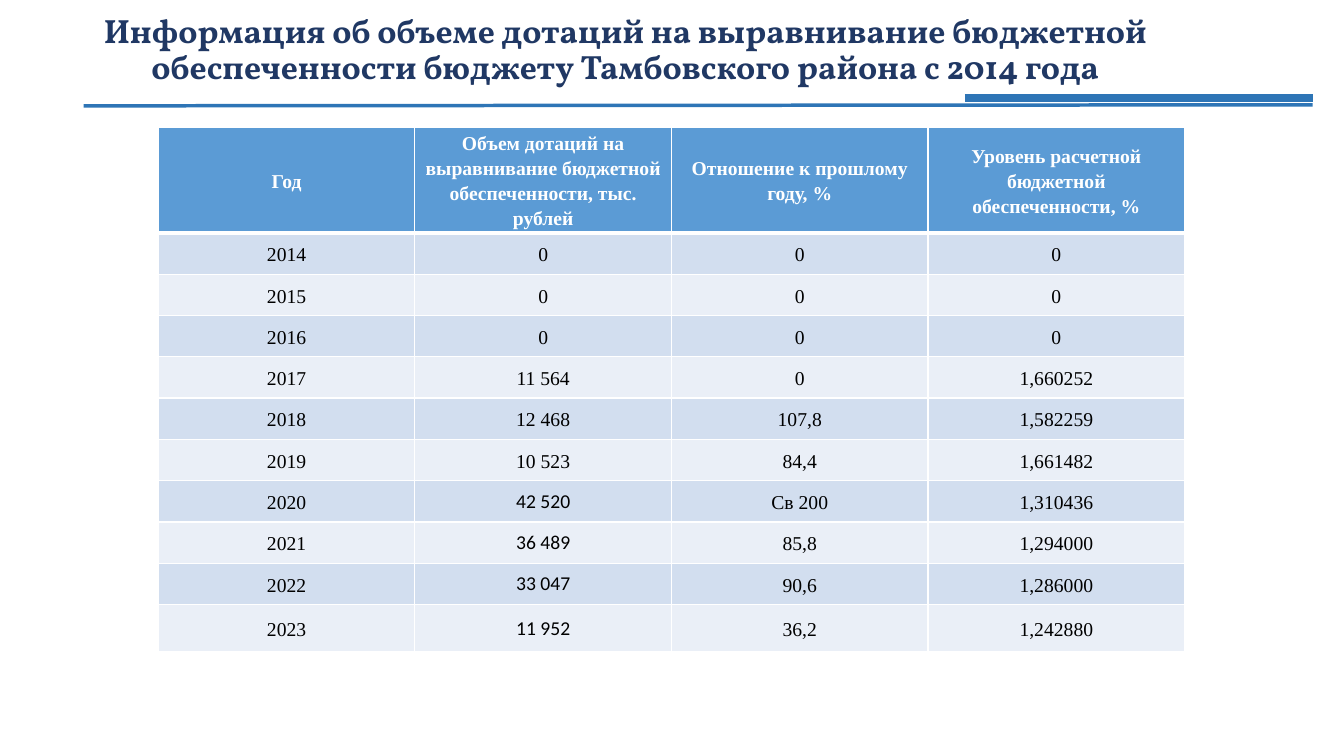
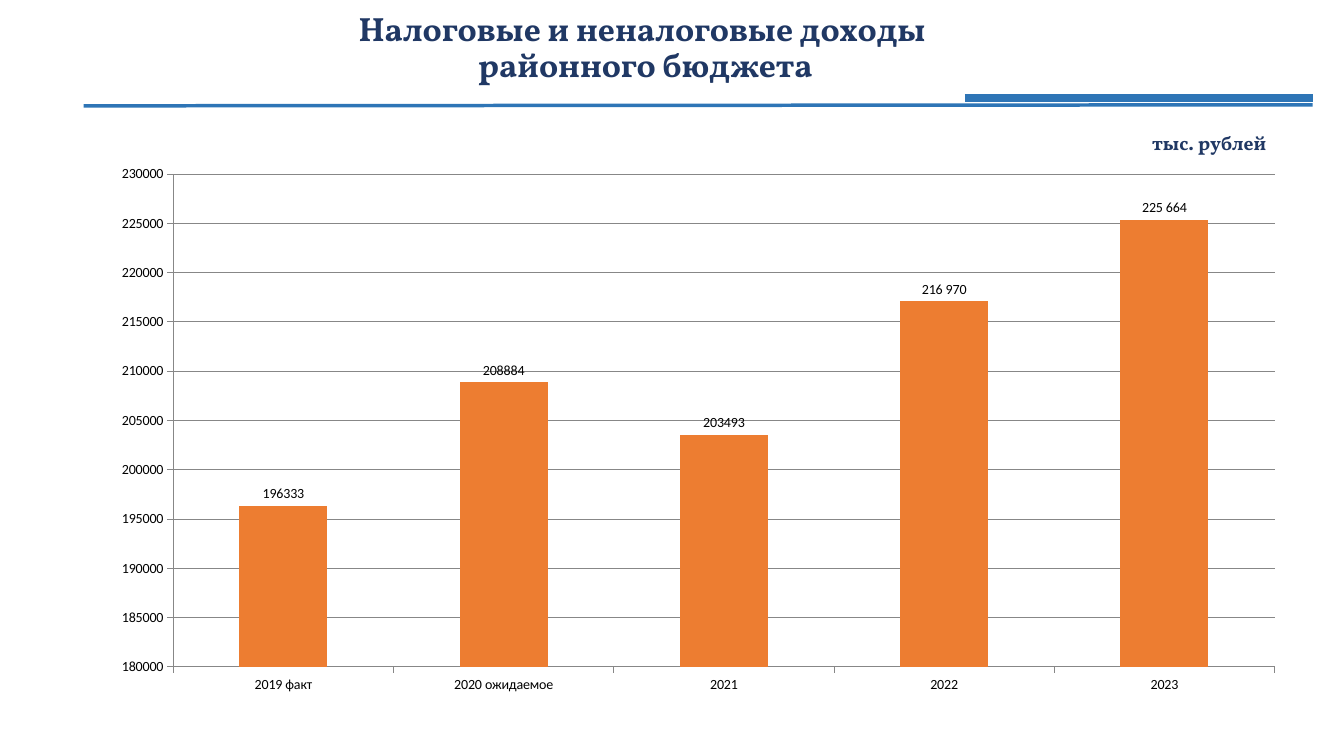
from lxml import etree
from pptx import Presentation
from pptx.chart.data import CategoryChartData
from pptx.dml.color import RGBColor
from pptx.enum.chart import XL_CHART_TYPE, XL_LABEL_POSITION, XL_TICK_MARK
from pptx.enum.shapes import MSO_CONNECTOR
from pptx.enum.text import MSO_ANCHOR, PP_ALIGN
from pptx.oxml import parse_xml
from pptx.oxml.ns import nsdecls, qn
from pptx.util import Inches, Pt

NAVY, BLUE, ORANGE = "203864", "2E75B6", "ED7D31"
WHITE, BLACK, GRAY = "FFFFFF", "000000", "878787"
HEADER, BANDS = "5B9BD5", ("D2DEEF", "EAEFF7")
RULES = [(0.83, 1.05, 13.02, 1.04, 2.5), (9.57, 0.97, 13.02, 0.97, 6)]


def rgb(value):
    return RGBColor.from_string(value)


def format_text(p, font, size, color, bold, align, spacing):
    p.font.name, p.font.size, p.font.bold = font, Pt(size), bold
    p.font.color.rgb = rgb(color)
    p.alignment, p.line_spacing = align, spacing


prs = Presentation()
prs.slide_width, prs.slide_height = Inches(13.33), Inches(7.5)

titles = [
    ("Информация об объеме дотаций на выравнивание бюджетной "
     "обеспеченности бюджету Тамбовского района с 2014 года", 0.2, 0.02, 0.96),
    ("Налоговые и неналоговые доходы \vрайонного бюджета", 0.4, 0.03, 0.91),
]
for text, left, top, height in titles:
    s = prs.slides.add_slide(prs.slide_layouts[5])
    title = s.shapes.title
    title.left, title.top = Inches(left), Inches(top)
    title.width, title.height = Inches(12), Inches(height)
    tf = title.text_frame
    tf.text = text
    tf.word_wrap = True
    tf.vertical_anchor = MSO_ANCHOR.MIDDLE
    format_text(tf.paragraphs[0], "Vollkorn", 24, NAVY, True, PP_ALIGN.CENTER, 0.9)
    for x1, y1, x2, y2, width in RULES:
        rule = s.shapes.add_connector(
            MSO_CONNECTOR.STRAIGHT, Inches(x1), Inches(y1), Inches(x2), Inches(y2))
        rule.line.color.rgb = rgb(BLUE)
        rule.line.width = Pt(width)
        etree.SubElement(rule._element.spPr, qn("a:effectLst"))

grants_slide, revenue_slide = prs.slides

rows = [
    ("Год", "Объем дотаций на выравнивание бюджетной обеспеченности, тыс. рублей",
     "Отношение к прошлому году, %", "Уровень расчетной бюджетной обеспеченности, %"),
    ("2014", "0", "0", "0"),
    ("2015", "0", "0", "0"),
    ("2016", "0", "0", "0"),
    ("2017", "11 564", "0", "1,660252"),
    ("2018", "12 468", "107,8", "1,582259"),
    ("2019", "10 523", "84,4", "1,661482"),
    ("2020", "42 520", "Св 200", "1,310436"),
    ("2021", "36 489", "85,8", "1,294000"),
    ("2022", "33 047", "90,6", "1,286000"),
    ("2023", "11 952", "36,2", "1,242880"),
]
heights = [1.05] + [0.41] * 9 + [0.47]
table = grants_slide.shapes.add_table(
    len(rows), 4, Inches(1.57), Inches(1.26), Inches(10.18), Inches(sum(heights))).table
for column in table.columns:
    column.width = Inches(10.18 / 4)
for r, values in enumerate(rows):
    table.rows[r].height = Inches(heights[r])
    for c, value in enumerate(values):
        cell = table.cell(r, c)
        cell.text = value
        cell.vertical_anchor = MSO_ANCHOR.MIDDLE
        cell.margin_left = cell.margin_right = Inches(0.07)
        cell.margin_top = cell.margin_bottom = 0
        for side in "LRTB":
            thick = (r, side) in ((0, "B"), (1, "T"))
            cell._tc.get_or_add_tcPr().append(parse_xml(
                f'<a:ln{side} {nsdecls("a")} w="{Pt(3 if thick else 1)}">'
                f'<a:solidFill><a:srgbClr val="{WHITE}"/></a:solidFill></a:ln{side}>'))
        cell.fill.solid()
        cell.fill.fore_color.rgb = rgb(BANDS[(r - 1) % 2] if r else HEADER)
        recent = c == 1 and r >= 7
        format_text(cell.text_frame.paragraphs[0],
                    "Calibri" if recent else "Times New Roman", 14,
                    BLACK if r else WHITE, r == 0, PP_ALIGN.CENTER,
                    1.0 if recent else 1.15)

unit = revenue_slide.shapes.add_textbox(
    Inches(10.93), Inches(1.25), Inches(1.73), Inches(0.34))
tf = unit.text_frame
tf.word_wrap = True
tf.text = "тыс. рублей"
format_text(tf.paragraphs[0], "Vollkorn", 14, NAVY, True, PP_ALIGN.RIGHT, 1.0)

data = CategoryChartData()
data.categories = ["2019 факт", "2020 ожидаемое", "2021", "2022", "2023"]
data.add_series("Series 1", (196333, 208884, 203542, 217084, 225376))
chart = revenue_slide.shapes.add_chart(
    XL_CHART_TYPE.COLUMN_CLUSTERED, Inches(0.97), Inches(1.54),
    Inches(11.91), Inches(5.44), data).chart
chart.has_legend = chart.has_title = False
chart.font.name, chart.font.size = "Calibri", Pt(10)
chart.font.color.rgb = rgb(BLACK)

value_axis = chart.value_axis
value_axis.minimum_scale, value_axis.maximum_scale = 180000, 230000
value_axis.major_unit = 5000
value_axis.has_major_gridlines = True
for axis in (value_axis, chart.category_axis):
    axis.major_tick_mark = XL_TICK_MARK.OUTSIDE
    axis.format.line.color.rgb = rgb(GRAY)
value_axis.major_gridlines.format.line.color.rgb = rgb(GRAY)

plot = chart.plots[0]
plot.gap_width = 150
plot.vary_by_categories = False
series = plot.series[0]
series.format.fill.solid()
series.format.fill.fore_color.rgb = rgb(ORANGE)
labels = series.data_labels
labels.show_value = True
labels.position = XL_LABEL_POSITION.OUTSIDE_END
for i, text in {2: "203493", 3: "216 970", 4: "225 664"}.items():
    label = series.points[i].data_label
    label.text_frame.text = text
    label.position = XL_LABEL_POSITION.OUTSIDE_END
    format_text(label.text_frame.paragraphs[0], "Calibri", 10, BLACK, False,
                PP_ALIGN.CENTER, 1.0)

prs.save("out.pptx")
